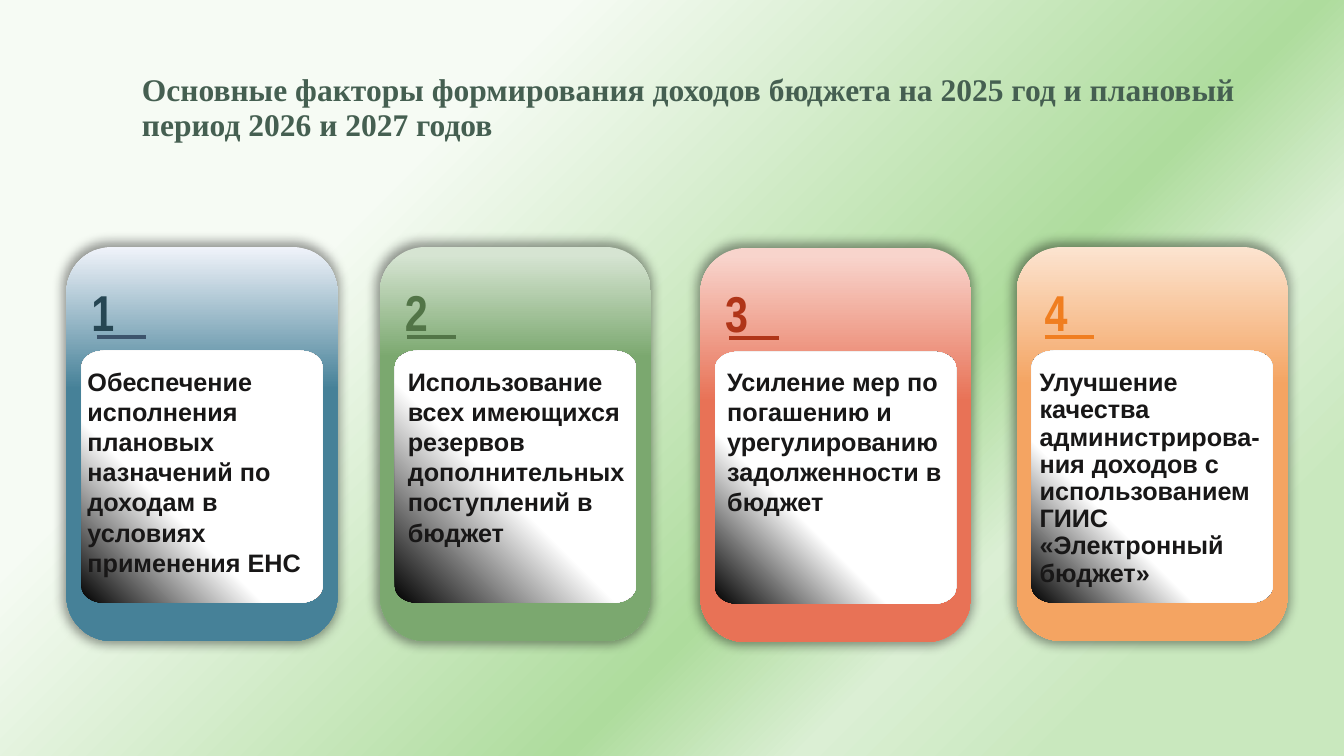
from collections import namedtuple
from dataclasses import dataclass

from lxml.etree import SubElement
from pptx import Presentation
from pptx.dml.color import RGBColor
from pptx.enum.shapes import MSO_CONNECTOR, MSO_SHAPE
from pptx.enum.text import MSO_ANCHOR, MSO_AUTO_SIZE
from pptx.oxml.ns import qn
from pptx.util import Inches, Pt


@dataclass(frozen=True)
class Theme:
    title: str = "455F51"
    body: str = "181717"
    white: str = "FFFFFF"
    black: str = "000000"
    page: tuple = ((27, "F6FBF4", 82), (63, "AEDC9D"), (74, "DBEFD4"), (86, "C9E8BE"))
    serif: str = "Times New Roman"
    sans: str = "Arial"
    narrow: str = "Arial Narrow"
    title_size: float = 22.5
    num_size: float = 36
    body_size: float = 18
    rule: float = 3


T = Theme()
Box = namedtuple("Box", "x y w h")
# Offsets (num, rule, text) are measured from the card's left edge
Card = namedtuple("Card", "x y stops num_color rule_color fade num rule text text_y text_w text_h space lines")

CARDS = [
    Card(0.66, 2.45, ((0, "F0F3FA"), (36, "468198")), "264653", "3C546C", 63,
         0.15, 0.3, 0.11, 1.13, 2.43, 2.22, None,
         ["Обеспечение исполнения плановых назначений по доходам в условиях применения ЕНС"]),
    Card(3.77, 2.45, ((2, "D6E4D2"), (28, "7BA86F")), "527547", "527547", 55,
         0.15, 0.27, 0.18, 1.13, 2.39, 1.92, None,
         ["Использование всех имеющихся резервов дополнительных поступлений в бюджет"]),
    Card(6.95, 2.46, ((2, "F8D4CC"), (39, "E87256")), "B03518", "B03518", 65,
         0.15, 0.29, 0.17, 1.12, 2.63, 1.62, None,
         ["Усиление мер по погашению и урегулированию задолженности в бюджет"]),
    Card(10.09, 2.45, ((0, "FCE4D0"), (35, "F4A462")), "F07E20", "F07E20", 67,
         0.18, 0.28, 0.13, 1.17, 2.51, 2.28, 0.9,
         ["Улучшение качества администрирова-",
          "ния доходов с использованием ГИИС «Электронный бюджет»"]),
]


def place(box):
    return [Inches(v) for v in box]


def add_color(node, code, alpha=100):
    clr = SubElement(node, qn("a:srgbClr"), val=code)
    if alpha < 100:
        SubElement(clr, qn("a:alpha"), val=str(alpha * 1000))


def add_grad(props, stops, angle=None):
    """Swap the solid fill for a linear fade, or a round one from the top right."""
    solid = props.find(qn("a:solidFill"))
    grad = SubElement(props, qn("a:gradFill"), rotWithShape="1")
    props.replace(solid, grad)
    items = SubElement(grad, qn("a:gsLst"))
    for pos, *code in stops:
        add_color(SubElement(items, qn("a:gs"), pos=str(pos * 1000)), *code)
    if angle is None:
        round_ = SubElement(grad, qn("a:path"), path="circle")
        SubElement(round_, qn("a:fillToRect"), l="100000", b="100000")
    else:
        SubElement(grad, qn("a:lin"), ang=str(angle * 60000), scaled="0")


def style(shape, stops, angle=None):
    """Give a shape its fade, without outline or shadow."""
    shape.fill.solid()
    shape.line.fill.background()
    shape.shadow.inherit = False
    add_grad(shape.element.spPr, stops, angle)


def add_shade(shape):
    shade = SubElement(shape.element.spPr.find(qn("a:effectLst")), qn("a:outerShdw"),
                       blurRad=str(Pt(8)), dist=str(Pt(4)), dir="5400000",
                       sx="102000", sy="102000", algn="ctr", rotWithShape="0")
    add_color(shade, T.black, 40)


def add_text(slide, box, lines, font, size, color, space=None, anchor=MSO_ANCHOR.TOP):
    shape = slide.shapes.add_textbox(*place(box))
    frame = shape.text_frame
    frame.word_wrap = True
    frame.vertical_anchor = anchor
    for i, line in enumerate(lines):
        para = frame.paragraphs[0] if i == 0 else frame.add_paragraph()
        if space:
            para.line_spacing = space
        run = para.add_run()
        run.text = line
        run.font.name = font
        run.font.size = Pt(size)
        run.font.bold = True
        run.font.color.rgb = RGBColor.from_string(color)
    return frame


def add_panel(slide, box, fade):
    """White panel with elliptical corners, dark at the bottom left."""
    x, y, w, h = place(box)
    rx, ry = Inches(0.22), Inches(0.16)
    # Each corner: where its curve starts, its tip, where the curve ends
    bends = [
        ((x + rx, y), (x, y), (x, y + ry)),
        ((x, y + h - ry), (x, y + h), (x + rx, y + h)),
        ((x + w - rx, y + h), (x + w, y + h), (x + w, y + h - ry)),
        ((x + w, y + ry), (x + w, y), (x + w - rx, y)),
    ]
    dots = [dot for start, _, end in bends for dot in (start, end)]
    pen = slide.shapes.build_freeform(*dots[0])
    pen.add_line_segments(dots[1:], close=True)
    shape = pen.convert_to_shape()

    # Turn every second segment into a curve
    lines = list(shape.element.iter(qn("a:lnTo")))[::2]
    for line, (start, tip, end) in zip(lines, bends):
        line.tag = qn("a:cubicBezTo")
        for child in list(line):
            line.remove(child)
        pulls = [tuple(a + (b - a) * 0.55 for a, b in zip(dot, tip)) for dot in (start, end)]
        for px, py in (*pulls, end):
            SubElement(line, qn("a:pt"), x=str(round(px - x)), y=str(round(py - y)))
    style(shape, ((fade, T.white), (100, T.black)))


def add_rule(slide, x, y, color):
    line = slide.shapes.add_connector(MSO_CONNECTOR.STRAIGHT, *place((x, y, x + 0.49, y)))
    line.line.color.rgb = RGBColor.from_string(color)
    line.line.width = Pt(T.rule)
    SubElement(line.element.spPr, qn("a:effectLst"))


def add_card(slide, box, num, card):
    # Coloured body, turned on its side
    turn = (box.h - box.w) / 2
    body = slide.shapes.add_shape(
        MSO_SHAPE.ROUNDED_RECTANGLE,
        *place((box.x - turn, box.y + turn, box.h, box.w)))
    body.rotation = 270
    body.adjustments[0] = 0.167
    style(body, card.stops, 180)
    add_shade(body)

    # Number and its underline
    frame = add_text(slide, Box(box.x + card.num, box.y + 0.5, 1.2, 0.27), [str(num)],
                     T.narrow, T.num_size, card.num_color, anchor=MSO_ANCHOR.MIDDLE)
    frame.margin_top = frame.margin_bottom = Inches(0.1)
    add_rule(slide, box.x + card.rule, box.y + 0.89, card.rule_color)

    # Panel and wording
    add_panel(slide, Box(box.x + 0.15, box.y + 1.03, box.w - 0.3, 2.5), card.fade)
    frame = add_text(slide, Box(box.x + card.text, box.y + card.text_y, card.text_w, card.text_h),
                     card.lines, T.sans, T.body_size, T.body, card.space)
    frame.auto_size = MSO_AUTO_SIZE.SHAPE_TO_FIT_TEXT


def add_page(slide):
    slide.background.fill.solid()
    add_grad(slide.element.find(".//" + qn("p:bgPr")), T.page, 45)


def main():
    deck = Presentation()
    deck.slide_width, deck.slide_height = Inches(13.34), Inches(7.5)
    slide = deck.slides.add_slide(deck.slide_layouts[6])
    add_page(slide)
    add_text(slide, Box(1.31, 0.68, 11.28, 0.8),
             ["Основные факторы формирования доходов бюджета на 2025 год и плановый период 2026 и 2027 годов"],
             T.serif, T.title_size, T.title, 0.9, MSO_ANCHOR.MIDDLE)
    for num, card in enumerate(CARDS, 1):
        add_card(slide, Box(card.x, card.y, 2.69, 3.91), num, card)
    deck.save("out.pptx")


if __name__ == "__main__":
    main()
